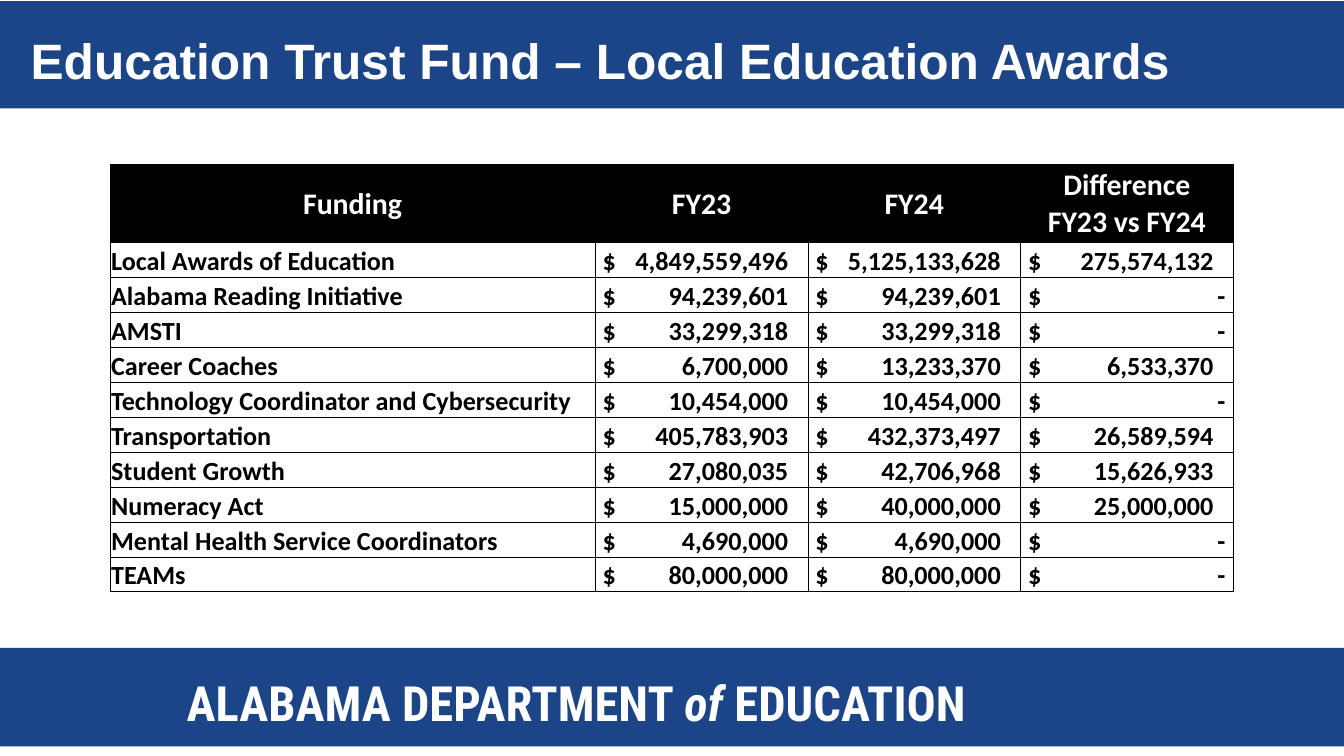
from dataclasses import dataclass

from lxml import etree
from pptx import Presentation
from pptx.dml.color import RGBColor
from pptx.enum.shapes import MSO_SHAPE
from pptx.enum.text import MSO_ANCHOR, MSO_AUTO_SIZE, PP_ALIGN
from pptx.oxml import parse_xml
from pptx.oxml.ns import nsdecls, qn
from pptx.util import Cm, Pt

RECTANGLE = MSO_SHAPE.RECTANGLE
TOP, MIDDLE, BOTTOM = MSO_ANCHOR.TOP, MSO_ANCHOR.MIDDLE, MSO_ANCHOR.BOTTOM
LEFT, CENTER = PP_ALIGN.LEFT, PP_ALIGN.CENTER
NO_AUTOFIT = MSO_AUTO_SIZE.NONE
TITLE_ONLY = 5


@dataclass(frozen=True)
class Theme:
    blue: str = "1C4587"
    white: str = "FFFFFF"
    black: str = "000000"
    title_font: str = "Arial"
    footer_font: str = "Roboto Condensed"
    table_font: str = "Calibri"
    title_size: float = 26.6
    footer_size: float = 26
    header_size: float = 16
    body_size: float = 14
    border_width: float = 0.5


THEME = Theme()

HEADERS = ("Funding", "FY23", "FY24", "Difference\nFY23 vs FY24")
AWARDS = (
    ("Local Awards of Education", 4849559496, 5125133628),
    ("Alabama Reading Initiative", 94239601, 94239601),
    ("AMSTI", 33299318, 33299318),
    ("Career Coaches", 6700000, 13233370),
    ("Technology Coordinator and Cybersecurity", 10454000, 10454000),
    ("Transportation", 405783903, 432373497),
    ("Student Growth", 27080035, 42706968),
    ("Numeracy Act", 15000000, 40000000),
    ("Mental Health Service Coordinators", 4690000, 4690000),
    ("TEAMs", 80000000, 80000000),
)
COLUMN_WIDTHS = (9.17, 4.02, 4.02, 4.02)
HEADER_HEIGHT, ROW_HEIGHT = 1.48, 0.66
AMOUNT_TAB, DASH_TAB = 3.51, 3.73


def set_values(target, values):
    for name, value in values.items():
        setattr(target, name, value)


def format_span(span, font, size, color, italic=False):
    set_values(span.font, {"name": font, "size": Pt(size), "bold": True, "italic": italic})
    span.font.color.rgb = RGBColor.from_string(color)


def format_frame(frame, anchor):
    set_values(frame, {"word_wrap": True, "auto_size": NO_AUTOFIT, "vertical_anchor": anchor})
    for side in ("left", "top", "right", "bottom"):
        setattr(frame, f"margin_{side}", Cm(0.25))


def add_bar(page, top, height, width):
    bar = page.shapes.add_shape(RECTANGLE, 0, Cm(top), width, Cm(height))
    bar.shadow.inherit = False
    bar.fill.solid()
    bar.fill.fore_color.rgb = RGBColor.from_string(THEME.blue)
    bar.line.fill.background()


def add_text_shadow(span):
    shadow = parse_xml(
        f'<a:effectLst {nsdecls("a")}><a:outerShdw blurRad="38100" dist="38100" dir="2700000">'
        f'<a:srgbClr val="{THEME.black}"><a:alpha val="43000"/></a:srgbClr>'
        "</a:outerShdw></a:effectLst>"
    )
    span.font.fill  # the shadow belongs right after the fill
    span.font._rPr.find(qn("a:solidFill")).addnext(shadow)


def add_footer(page):
    box = page.shapes.add_textbox(Cm(3.28), Cm(12.67), Cm(16.94), Cm(1.24))
    format_frame(box.text_frame, TOP)
    para = box.text_frame.paragraphs[0]
    set_values(para, {"line_spacing": 0.8, "space_after": Pt(12)})
    for text, italic in (("ALABAMA DEPARTMENT ", False), ("of", True), (" EDUCATION", False)):
        span = para.add_run()
        span.text = text
        format_span(span, THEME.footer_font, THEME.footer_size, THEME.white, italic)
        add_text_shadow(span)


def fill_title(page, text):
    title = page.shapes.title
    set_values(title, {"left": Cm(0.33), "top": Cm(0.32), "width": Cm(24.87), "height": Cm(2.16)})
    format_frame(title.text_frame, TOP)
    para = title.text_frame.paragraphs[0]
    set_values(para, {"text": text, "alignment": LEFT})
    format_span(para.runs[0], THEME.title_font, THEME.title_size, THEME.white)
    # Bring the title in front of the blue bar
    title.element.getparent().append(title.element)


def add_borders(cell):
    properties = cell._tc.get_or_add_tcPr()
    for side in ("lnL", "lnR", "lnT", "lnB"):
        line = etree.SubElement(properties, qn(f"a:{side}"), w=str(Pt(THEME.border_width)))
        fill = etree.SubElement(line, qn("a:solidFill"))
        etree.SubElement(fill, qn("a:srgbClr"), val=THEME.black)


def add_right_tab(para, position):
    tabs = etree.SubElement(para._p.get_or_add_pPr(), qn("a:tabLst"))
    etree.SubElement(tabs, qn("a:tab"), pos=str(Cm(position)), algn="r")


def fill_cell(cell, text, header=False, tab=None):
    add_borders(cell)
    set_values(cell, {
        "vertical_anchor": MIDDLE if header else BOTTOM,
        "margin_left": Cm(0.14 if tab else 0.02),
        "margin_right": Cm(0.02), "margin_top": Cm(0.02), "margin_bottom": 0,
    })
    if header:
        cell.fill.solid()
        cell.fill.fore_color.rgb = RGBColor.from_string(THEME.black)
    else:
        cell.fill.background()
    para = cell.text_frame.paragraphs[0]
    set_values(para, {"text": text, "alignment": CENTER if header else LEFT})
    if tab:
        add_right_tab(para, tab)
    size = THEME.header_size if header else THEME.body_size
    color = THEME.white if header else THEME.black
    for span in para.runs:
        format_span(span, THEME.table_font, size, color)


def add_awards_table(page):
    height = HEADER_HEIGHT + ROW_HEIGHT * len(AWARDS)
    frame = page.shapes.add_table(len(AWARDS) + 1, len(HEADERS), Cm(2.08), Cm(3.1),
                                  Cm(sum(COLUMN_WIDTHS)), Cm(height))
    table = frame.table
    for column, width in zip(table.columns, COLUMN_WIDTHS):
        column.width = Cm(width)
    for index, row in enumerate(table.rows):
        row.height = Cm(ROW_HEIGHT if index else HEADER_HEIGHT)

    for column, text in enumerate(HEADERS):
        fill_cell(table.cell(0, column), text, header=True)
    for row, (name, before, after) in enumerate(AWARDS, start=1):
        fill_cell(table.cell(row, 0), name)
        for column, amount in enumerate((before, after, after - before), start=1):
            text = f"$\t{amount:,}" if amount else "$\t-"
            fill_cell(table.cell(row, column), text, tab=AMOUNT_TAB if amount else DASH_TAB)


def main():
    deck = Presentation()
    set_values(deck, {"slide_width": Cm(25.4), "slide_height": Cm(14.28)})
    page = deck.slides.add_slide(deck.slide_layouts[TITLE_ONLY])

    # Blue bars at the top and bottom
    add_bar(page, 0.02, 2.03, deck.slide_width)
    add_bar(page, 12.24, 1.86, deck.slide_width)

    # Department name and title
    add_footer(page)
    fill_title(page, "Education Trust Fund – Local Education Awards")

    # Funding by year
    add_awards_table(page)

    deck.save("out.pptx")


if __name__ == "__main__":
    main()
